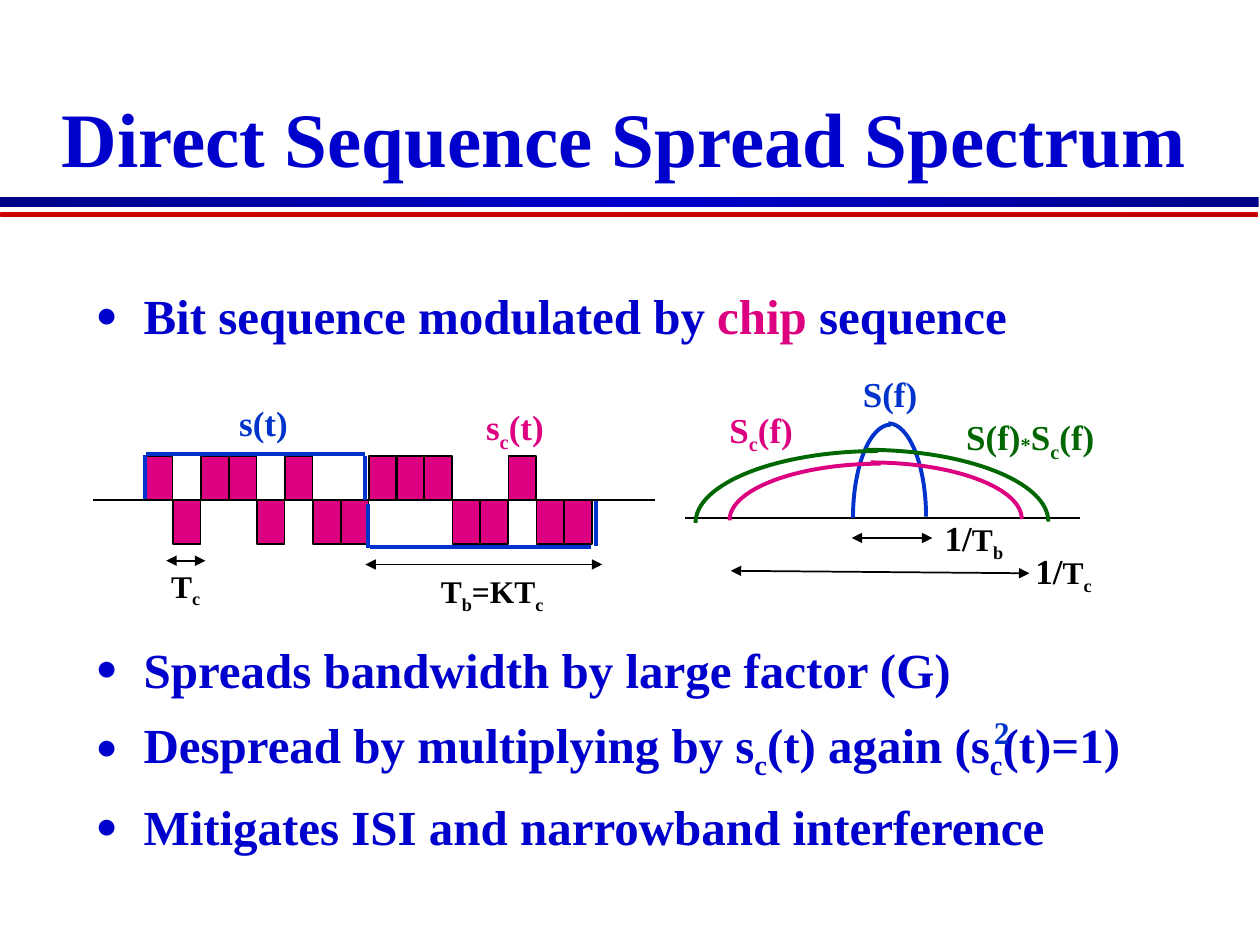
import copy

import pptx
import pptx.dml.color
import pptx.enum.shapes
import pptx.enum.text
import pptx.oxml
import pptx.oxml.ns
import pptx.util

Inches = pptx.util.Inches
Pt = pptx.util.Pt
RGBColor = pptx.dml.color.RGBColor
OxmlElement = pptx.oxml.xmlchemy.OxmlElement
RECTANGLE = pptx.enum.shapes.MSO_SHAPE.RECTANGLE
AUTO_SIZE = pptx.enum.text.MSO_AUTO_SIZE

NAVY = RGBColor(0x00, 0x00, 0x89)
BLUE = RGBColor(0x00, 0x00, 0xCC)
RED = RGBColor(0xCC, 0x00, 0x00)
DARK_RED = RGBColor(0xB9, 0x00, 0x00)
SIGNAL_BLUE = RGBColor(0x00, 0x33, 0xCC)
CHIP_PINK = RGBColor(0xDC, 0x00, 0x81)
GREEN = RGBColor(0x00, 0x66, 0x00)
BLACK = RGBColor(0x00, 0x00, 0x00)

SUB = {"baseline": -25}
SMALL = {"size": Pt(18)}
SMALL_SUB = SMALL | SUB


def write_runs(paragraph, runs, size, color):
    """Add (text, overrides) runs; overrides may hold size, color and baseline."""
    for text, overrides in runs:
        run = paragraph.add_run()
        run.text = text
        font_format = {"name": "Times New Roman", "bold": True, "size": overrides.get("size", size)}
        for attribute, value in font_format.items():
            setattr(run.font, attribute, value)
        run.font.color.rgb = overrides.get("color", color)
        if "baseline" in overrides:
            run.font._element.set("baseline", str(overrides["baseline"] * 1000))


def draw_line(start, end, color=BLACK, width=1, arrows=False):
    line = slide.shapes.add_connector(
        pptx.enum.shapes.MSO_CONNECTOR.STRAIGHT, *map(Inches, start + end))
    line.line.color.rgb = color
    line.line.width = Pt(width)
    if arrows:
        outline = line.line._get_or_add_ln()
        for tag in ("a:headEnd", "a:tailEnd"):
            arrowhead = OxmlElement(tag)
            arrowhead.set("type", "triangle")
            outline.append(arrowhead)
    line._element.spPr.append(OxmlElement("a:effectLst"))


presentation = pptx.Presentation()
presentation.slide_width = Inches(10)
presentation.slide_height = Inches(7.5)
slide = presentation.slides.add_slide(presentation.slide_layouts[1])

# Double rule under the title
for left, top, width, height, colors in [
    (0, 1.56, 9.99, 0.08, [NAVY, BLUE, NAVY]),
    (0.01, 1.69, 9.97, 0.03, [RED, DARK_RED]),
]:
    rule = slide.shapes.add_shape(RECTANGLE, *map(Inches, (left, top, width, height)))
    rule.shadow.inherit = False
    rule.fill.gradient()
    rule.fill.gradient_angle = 0
    stop_list = next(rule._element.spPr.iter(pptx.oxml.ns.qn("a:gsLst")))
    for _ in colors[2:]:
        stop_list.append(copy.deepcopy(stop_list[0]))
    for index, (stop, color) in enumerate(zip(rule.fill.gradient_stops, colors)):
        stop.position = index / (len(colors) - 1)
        stop.color.rgb = color
    if RED in colors:
        rule.line.color.rgb = RED
        rule.line.width = Pt(1)
    else:
        rule.line.fill.background()

# Title
title = slide.shapes.title
title.left, title.top, title.width, title.height = map(Inches, (0.3, 0.25, 9.31, 1.25))
title.text_frame.auto_size = AUTO_SIZE.NONE
title.text_frame.vertical_anchor = pptx.enum.text.MSO_ANCHOR.BOTTOM
heading = title.text_frame.paragraphs[0]
heading.alignment = pptx.enum.text.PP_ALIGN.CENTER
heading.line_spacing = 0.8
write_runs(heading, [("Direct Sequence Spread Spectrum", {})], Pt(44), BLUE)

# Bullets, with room for the two diagrams after the first
body = slide.placeholders[1]
body.left, body.top, body.width, body.height = map(Inches, (0.66, 2.17, 8.58, 4.5))
body.text_frame.auto_size = AUTO_SIZE.NONE
bullets = [
    (6.5, [("Bit sequence modulated by ", {}), ("chip", {"color": CHIP_PINK}), (" sequence", {})]),
    (165, [("Spreads bandwidth by large factor (G)", {})]),
    (5.5, [("Despread by multiplying by s", {}), ("c", SUB), ("(t) again (s", {}),
           ("c", SUB), ("(t)=1)", {})]),
    (5.5, [("Mitigates ISI and narrowband interference", {})]),
]
for index, (space_before, runs) in enumerate(bullets):
    bullet = body.text_frame.add_paragraph() if index else body.text_frame.paragraphs[0]
    bullet.line_spacing = 1.1
    bullet.space_before = Pt(space_before)
    properties = bullet._p.get_or_add_pPr()
    properties.set("marL", str(Inches(0.38)))
    properties.set("indent", str(Inches(-0.38)))
    for tag, attribute, value in [("a:buClr", None, None), ("a:buSzPct", "val", "75000"),
                                  ("a:buFont", "typeface", "Times New Roman"),
                                  ("a:buChar", "char", "●")]:
        mark = OxmlElement(tag)
        if attribute:
            mark.set(attribute, value)
        else:
            bullet_color = OxmlElement("a:srgbClr")
            bullet_color.set("val", str(BLUE))
            mark.append(bullet_color)
        properties.append(mark)
    write_runs(bullet, runs, Pt(28), BLUE)

# Chip sequence along the time axis
axis_y = 3.97
draw_line((0.74, axis_y), (5.2, axis_y))
chip_width, chip_height = 0.22, 0.35
chip_pitch = (4.49 - 1.16) / 15
for index, sign in enumerate("+-++-+--+++--+--"):
    chip_top = axis_y - chip_height if sign == "+" else axis_y
    chip = slide.shapes.add_shape(
        RECTANGLE, Inches(1.15 + index * chip_pitch), Inches(chip_top),
        Inches(chip_width), Inches(chip_height))
    chip.shadow.inherit = False
    chip.fill.solid()
    chip.fill.fore_color.rgb = CHIP_PINK
    chip.line.color.rgb = BLACK
    chip.line.width = Pt(1)

# Bit sequence: one high bit, then one low bit
for start, end in [
    ((1.16, 3.6), (2.9, 3.6)), ((1.15, 3.61), (1.15, 3.96)), ((2.9, 3.62), (2.9, 3.97)),
    ((2.94, 4.34), (4.69, 4.34)), ((4.73, 3.98), (4.73, 4.33)), ((2.92, 4), (2.92, 4.35)),
]:
    draw_line(start, end, SIGNAL_BLUE, 2.25)

# Spectra: each a right and a left quarter ellipse (center x, top, x radius, y radius)
draw_line((5.44, 4.11), (8.57, 4.11))
handle = 0.55  # Bezier handle length of a quarter ellipse, as a share of its radius
for color, *quarters in [
    (SIGNAL_BLUE, (7.05, 3.36, 0.3, 0.74), (7.07, 3.37, -0.3, 0.74)),
    (CHIP_PINK, (6.91, 3.67, 1.2, 0.45), (6.99, 3.68, -1.2, 0.45)),
    (GREEN, (6.87, 3.57, 1.45, 0.57), (6.97, 3.58, -1.45, 0.57)),
]:
    for center_x, top, radius_x, radius_y in quarters:
        points = [
            (Inches(center_x + radius_x * across), Inches(top + radius_y * down))
            for across, down in [(0, 0), (handle, 0), (1, 1 - handle), (1, 1)]
        ]
        builder = slide.shapes.build_freeform(*points[0])
        builder.add_line_segments(points[1:], close=False)
        curve = builder.convert_to_shape()
        # Turn the three segments into one cubic curve through the same points
        segments = list(curve._element.spPr.iter(pptx.oxml.ns.qn("a:lnTo")))
        bezier = OxmlElement("a:cubicBezTo")
        segments[0].addprevious(bezier)
        for segment in segments:
            bezier.append(segment[0])
            segment.getparent().remove(segment)
        curve.shadow.inherit = False
        curve.fill.background()
        curve.line.color.rgb = color
        curve.line.width = Pt(2.25)

# Durations and bandwidths
for start, end in [
    ((2.9, 4.48), (4.78, 4.48)), ((1.32, 4.45), (1.63, 4.45)),
    ((6.76, 4.27), (7.4, 4.27)), ((5.8, 4.53), (8.17, 4.55)),
]:
    draw_line(start, end, arrows=True)

for left, top, width, color, runs in [
    (1.8, 3.14, 0.59, SIGNAL_BLUE, [("s(t)", {})]),
    (3.76, 3.17, 0.66, CHIP_PINK, [("s", {}), ("c", SUB), ("(t)", {})]),
    (3.33, 4.46, 1.11, BLACK, [(" ", {}), ("T", SMALL), ("b", SMALL_SUB),
                               ("=KT", SMALL), ("c", SMALL_SUB)]),
    (1.19, 4.42, 0.51, BLACK, [(" ", {}), ("T", SMALL), ("c", SMALL_SUB)]),
    (6.75, 2.91, 0.63, SIGNAL_BLUE, [("S(f)", {})]),
    (5.69, 3.19, 0.71, CHIP_PINK, [("S", {}), ("c", SUB), ("(f)", {})]),
    (7.33, 4.05, 0.74, BLACK, [(" 1/", {}), ("T", SMALL), ("b", SMALL_SUB)]),
    (8.05, 4.31, 0.73, BLACK, [(" 1/", {}), ("T", SMALL), ("c", SMALL_SUB)]),
    (7.57, 3.25, 1.23, GREEN, [("S(f)", {}), ("*", {"baseline": -4}), ("S", {}),
                               ("c", SUB), ("(f)", {})]),
    (7.79, 5.61, 0.33, SIGNAL_BLUE, [("2", SMALL)]),
]:
    label = slide.shapes.add_textbox(*map(Inches, (left, top, width, 0.43)))
    label.text_frame.word_wrap = False
    label.text_frame.auto_size = AUTO_SIZE.SHAPE_TO_FIT_TEXT
    write_runs(label.text_frame.paragraphs[0], runs, Pt(20), color)

presentation.save("out.pptx")
